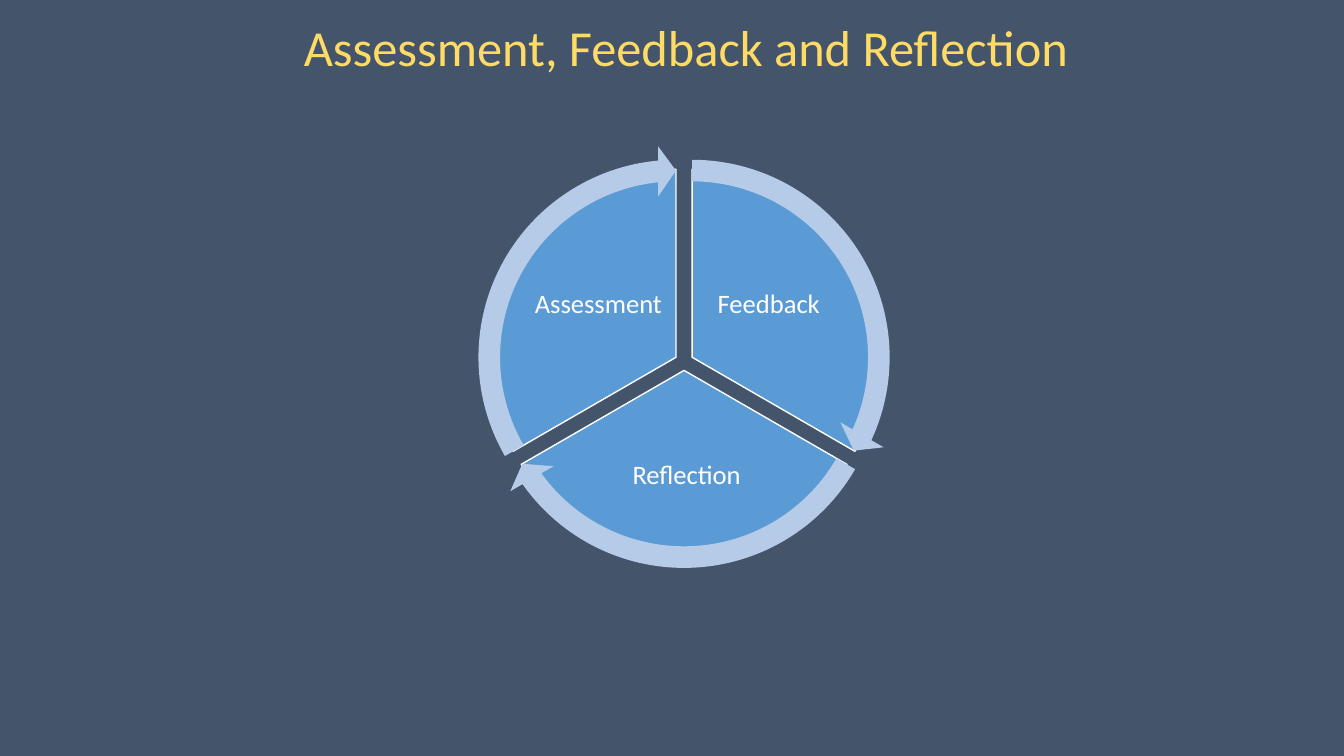
from dataclasses import dataclass
from pptx import Presentation
from pptx.dml.color import RGBColor
from pptx.enum.shapes import MSO_SHAPE
from pptx.enum.text import MSO_ANCHOR, PP_ALIGN
from pptx.shapes.autoshape import Shape
from pptx.shapes.shapetree import GroupShapes, SlideShapes
from pptx.util import Inches, Pt

PIE = MSO_SHAPE.PIE
ARROW = MSO_SHAPE.CIRCULAR_ARROW
CENTER = PP_ALIGN.CENTER
MIDDLE = MSO_ANCHOR.MIDDLE
TOP = MSO_ANCHOR.TOP


@dataclass(frozen=True)
class Theme:
    back: RGBColor = RGBColor.from_string("44546A")
    gold: RGBColor = RGBColor.from_string("FEDB65")
    blue: RGBColor = RGBColor.from_string("5B9BD5")
    pale: RGBColor = RGBColor.from_string("B5CBE7")
    white: RGBColor = RGBColor.from_string("FFFFFF")
    font: str = "Calibri"
    title: int = 36
    label: int = 19


@dataclass(frozen=True)
class Box:
    left: float
    top: float
    width: float
    height: float

    def place(self) -> list[Inches]:
        return [Inches(n) for n in (self.left, self.top, self.width, self.height)]

    def grow(self, edge: float) -> "Box":
        return Box(self.left - edge, self.top - edge,
                   self.width + 2 * edge, self.height + 2 * edge)


@dataclass(frozen=True)
class Sector:
    name: str
    start: int
    left: float
    top: float
    label: Box


THEME = Theme()
PIE_SIZE = 3.73
ARROW_SIZE = 4.2
SWEEP = 120
HEAD = 5.46
BAND = 5.1 / 100
BARB = 5.9 / 100
DEGREE = 0.6
SECTORS = [
    Sector("Feedback", 270, 5, 1.68, Box(6.96, 2.47, 1.33, 1.11)),
    Sector("Reflection", 30, 4.92, 1.81, Box(5.81, 4.23, 2, 0.98)),
    Sector("Assessment", 150, 4.84, 1.68, Box(5.27, 2.47, 1.33, 1.11)),
]


def add_text(shapes: SlideShapes | GroupShapes, text: str, box: Box,
             size: int, color: RGBColor, anchor: MSO_ANCHOR,
             frame_look: dict, line_look: dict) -> None:
    frame = shapes.add_textbox(*box.place()).text_frame
    line = frame.paragraphs[0]
    line.text = text
    looks = [
        (frame, {"word_wrap": True, "vertical_anchor": anchor, **frame_look}),
        (line, {"alignment": CENTER, **line_look}),
        (line.font, {"name": THEME.font, "size": Pt(size)}),
        (line.font.color, {"rgb": color}),
    ]
    for item, look in looks:
        for key, value in look.items():
            setattr(item, key, value)


def add_form(shapes: GroupShapes, kind: MSO_SHAPE, box: Box,
             color: RGBColor, values: list[float]) -> Shape:
    shape = shapes.add_shape(kind, *box.place())
    shape.shadow.inherit = False
    shape.fill.solid()
    shape.fill.fore_color.rgb = color
    shape.line.fill.background()
    for index, value in enumerate(values):
        shape.adjustments[index] = value
    return shape


def add_sector(shapes: GroupShapes, sector: Sector) -> None:
    box = Box(sector.left, sector.top, PIE_SIZE, PIE_SIZE)
    end = (sector.start + SWEEP) % 360
    pie = add_form(shapes, PIE, box, THEME.blue,
                   [sector.start * DEGREE, end * DEGREE])
    pie.line.color.rgb = THEME.white
    pie.line.width = Pt(1)
    inset = Inches(0.03)
    sides = ("left", "top", "right", "bottom")
    add_text(shapes, sector.name, sector.label, THEME.label, THEME.white, MIDDLE,
             {f"margin_{side}": inset for side in sides}, {"line_spacing": 0.9})


def add_arrow(shapes: GroupShapes, sector: Sector) -> None:
    box = Box(sector.left, sector.top, PIE_SIZE, PIE_SIZE)
    end = (sector.start + SWEEP) % 360
    add_form(shapes, ARROW, box.grow((ARROW_SIZE - PIE_SIZE) / 2), THEME.pale,
             [BAND, HEAD * DEGREE, (end - HEAD) * DEGREE,
              sector.start * DEGREE, BARB])


def main() -> None:
    deck = Presentation()
    deck.slide_width, deck.slide_height = Inches(13.33), Inches(7.5)
    slide = deck.slides.add_slide(deck.slide_layouts[6])
    fill = slide.background.fill
    fill.solid()
    fill.fore_color.rgb = THEME.back
    add_text(slide.shapes, "Assessment, Feedback and Reflection",
             Box(2.67, 0.11, 8.27, 0.71), THEME.title, THEME.gold, TOP, {}, {})
    cycle = slide.shapes.add_group_shape().shapes
    for draw in (add_sector, add_arrow):
        for sector in SECTORS:
            draw(cycle, sector)
    deck.save("out.pptx")


if __name__ == "__main__":
    main()
